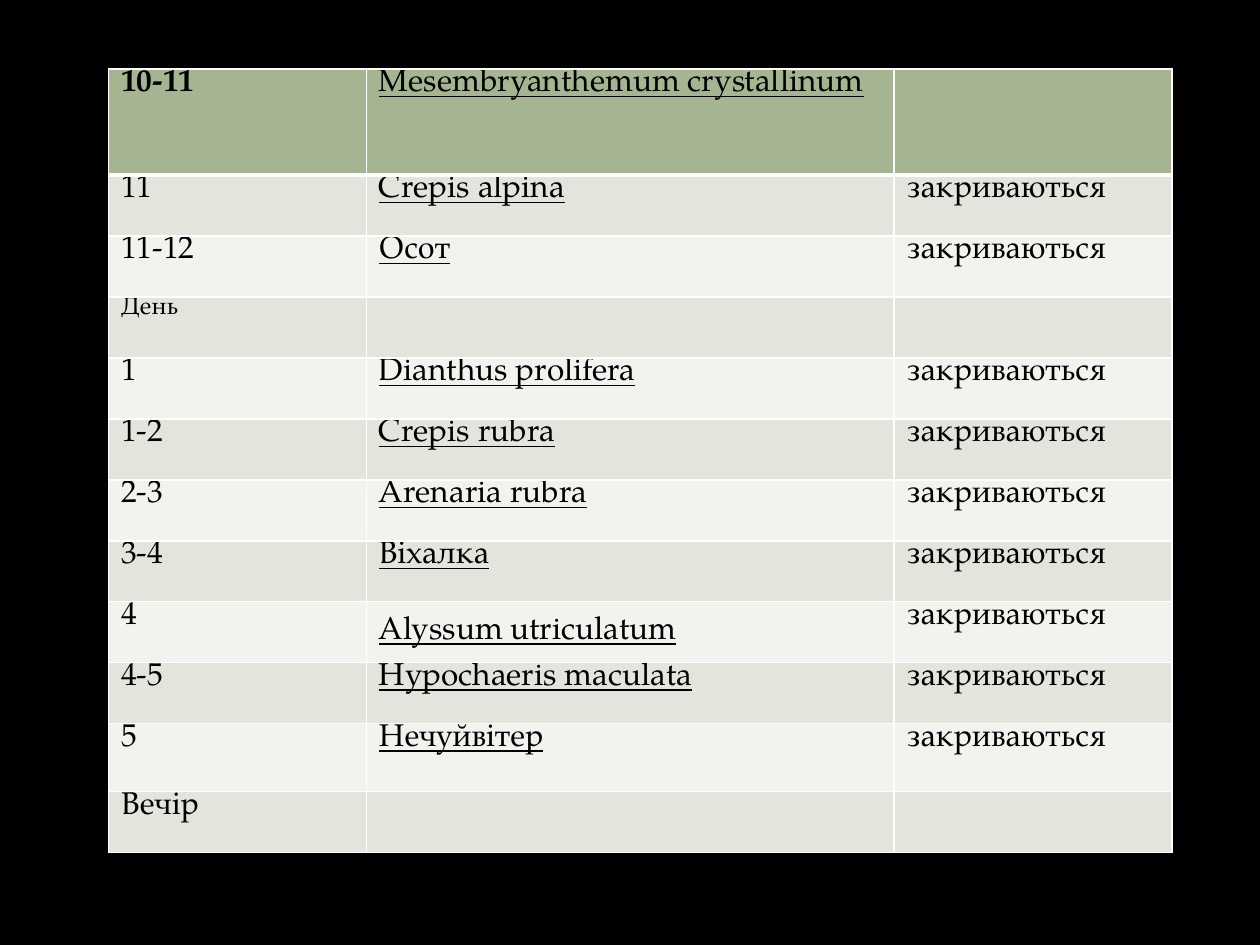
from dataclasses import dataclass

from lxml import etree
from pptx import Presentation
from pptx import util as u
from pptx.dml.color import RGBColor
from pptx.enum import text
from pptx.oxml import ns


@dataclass
class Theme:
    back: str = "000000"
    ink: str = "000000"
    line: str = "FFFFFF"
    head: str = "A5B592"
    bands: tuple = ("F0F3EE", "E1E5DC")
    face: str = "TeX Gyre Pagella"
    size: float = 18
    small: float = 14
    thin: float = 1
    thick: float = 3


class Deck:
    def __init__(self, theme):
        self.theme = theme
        self.prs = Presentation()
        self.prs.slide_width, self.prs.slide_height = u.Pt(720), u.Pt(540)
        self.slide = self.prs.slides.add_slide(self.prs.slide_layouts[6])
        fill = self.slide.background.fill
        fill.solid()
        fill.fore_color.rgb = RGBColor.from_string(theme.back)

    def table(self, left, top, cols, heights, rows):
        frame = self.slide.shapes.add_table(
            len(rows), len(cols), u.Pt(left), u.Pt(top),
            u.Pt(sum(cols)), u.Pt(sum(heights)))
        grid = frame.table
        for col, width in zip(grid.columns, cols):
            col.width = u.Pt(width)
        for row, height in zip(grid.rows, heights):
            row.height = u.Pt(height)
        for r, row in enumerate(rows):
            for c, words in enumerate(row):
                self.cell(grid.cell(r, c), r, c, words)
        return grid

    def cell(self, cell, r, c, words):
        theme = self.theme
        form = {"margin_left": u.Pt(7.2), "margin_right": u.Pt(7.2),
                "margin_top": 0, "margin_bottom": 0,
                "vertical_anchor": text.MSO_ANCHOR.TOP}
        for key, value in form.items():
            setattr(cell, key, value)
        cell.fill.solid()
        color = theme.bands[r % 2] if r else theme.head
        cell.fill.fore_color.rgb = RGBColor.from_string(color)
        self.edges(cell, r)
        if words:
            self.label(cell, words, bold=r == 0 and c == 0, underline=c == 1)

    def label(self, cell, words, **extra):
        run = cell.text_frame.paragraphs[0].add_run()
        run.text = words
        form = {"name": self.theme.face, "size": u.Pt(self.theme.size), **extra}
        for key, value in form.items():
            setattr(run.font, key, value)
        run.font.color.rgb = RGBColor.from_string(self.theme.ink)

    def edges(self, cell, r):
        # A thick rule separates the heading row from the rest
        theme = self.theme
        heavy = {0: "lnB", 1: "lnT"}.get(r)
        props = cell._tc.get_or_add_tcPr()
        for i, tag in enumerate(("lnL", "lnR", "lnT", "lnB")):
            width = theme.thick if tag == heavy else theme.thin
            line = etree.Element(ns.qn("a:" + tag), w=str(u.Pt(width)))
            solid = etree.SubElement(line, ns.qn("a:solidFill"))
            etree.SubElement(solid, ns.qn("a:srgbClr"), val=theme.line)
            props.insert(i, line)


def main():
    theme = Theme()
    deck = Deck(theme)

    # Hours, flowers and what they do
    shut = "закриваються"
    rows = [
        ("10-11", "Mesembryanthemum crystallinum", ""),
        ("11", "Crepis alpina", shut),
        ("11-12", "Осот", shut),
        ("День", "", ""),
        ("1", "Dianthus prolifera", shut),
        ("1-2", "Crepis rubra", shut),
        ("2-3", "Arenaria rubra", shut),
        ("3-4", "Віхалка", shut),
        ("4", "Alyssum utriculatum", shut),
        ("4-5", "Hypochaeris maculata", shut),
        ("5", "Нечуйвітер", shut),
        ("Вечір", "", ""),
    ]
    heights = [60.5] + [34.85] * 9 + [38.9, 34.85]
    grid = deck.table(62, 39.5, (147.4, 301.4, 158.9), heights, rows)

    # Two cells that differ from the rest
    day = grid.cell(3, 0).text_frame.paragraphs[0].runs[0]
    day.font.size = u.Pt(theme.small)
    grid.cell(8, 1).vertical_anchor = text.MSO_ANCHOR.MIDDLE

    deck.prs.save("out.pptx")


if __name__ == "__main__":
    main()
